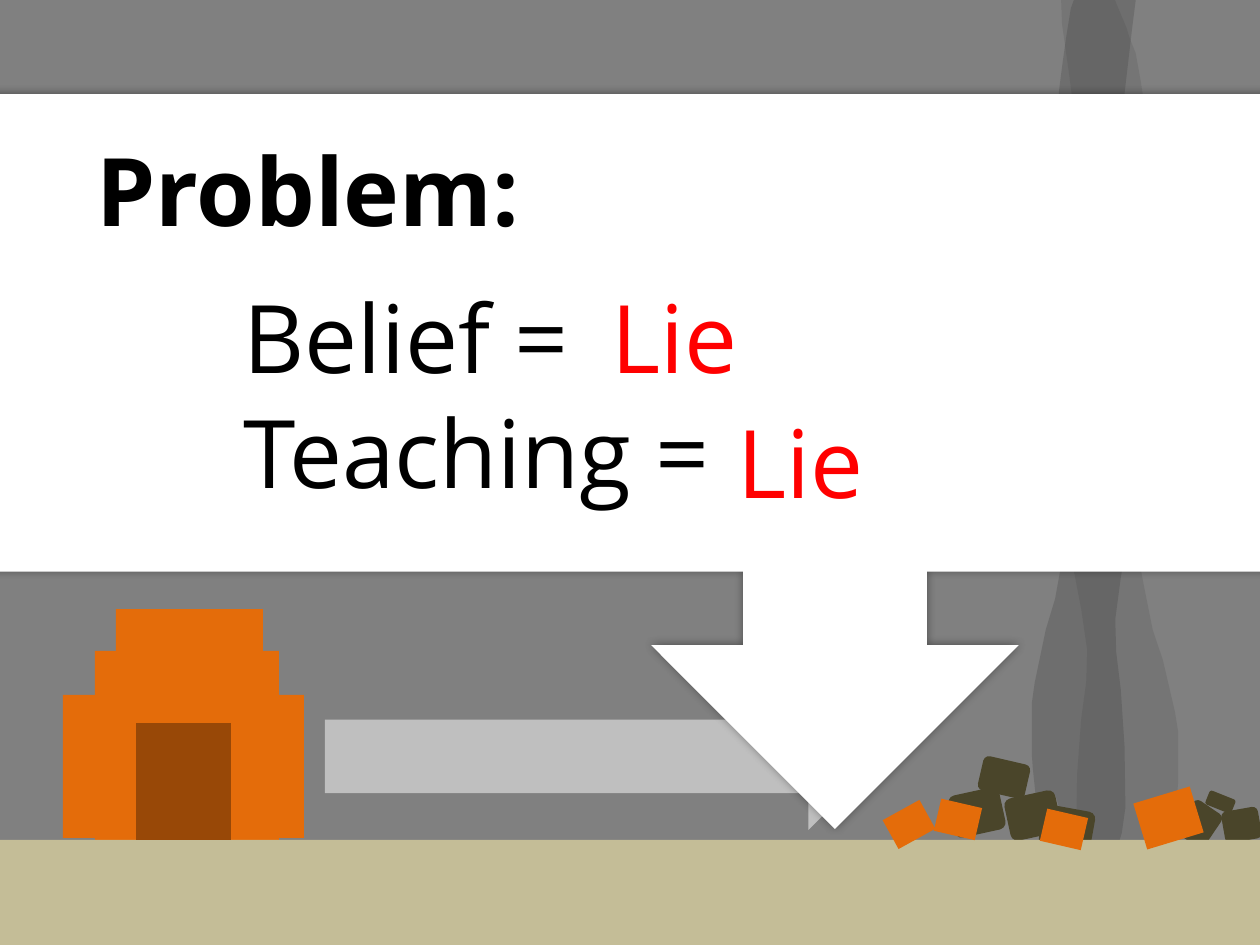
from lxml.etree import SubElement
from pptx import Presentation
from pptx.dml.color import RGBColor
from pptx.enum.shapes import MSO_SHAPE as Kind
from pptx.enum.text import MSO_ANCHOR as Anchor, MSO_AUTO_SIZE as AutoSize, PP_ALIGN as Align
from pptx.oxml.ns import qn
from pptx.util import Pt

THEME = {
    "sky": "808080", "brick": "E46C0A", "door": "984807", "rubble": "4A452A",
    "ground": "C4BD97", "arrow": "BFBFBF", "panel": "FFFFFF",
    "light smoke": "595959", "dark smoke": "404040", "shadow": "000000",
    "text": "000000", "lie": "FF0000", "font": "Open Sans", "size": 54,
}
PX = 914400 / 126
SLIDE = (1260, 945)

SKY = (-129, -144, 1507, 1105)
GROUND = (-92, 840, 1478, 141)
DOOR = (136, 723, 95, 117)
ARROW = (325, 683, 557, 147)
CALLOUT = (-63, 94, 1796, 735)
HOUSE = [(95, 651, 184, 193), (116, 609, 147, 107), (231, 695, 73, 143), (63, 695, 73, 143)]

RUBBLE = [
    (1041, 808, 52, 43, 10.3), (1007, 794, 52, 43, -12.3), (1182, 804, 34, 40, 34.2),
    (1213, 788, 15, 28, -68.2), (1223, 809, 37, 32, -10), (951, 791, 52, 43, -12.3),
    (980, 760, 48, 35, 12.9),
]
BRICKS = [
    (888, 808, 42, 33, -28.9), (937, 803, 42, 33, 13),
    (1043, 813, 42, 33, 13), (1139, 794, 59, 48, -16.9),
]

PLUME_SIZE = (121, 949)
PLUME = [
    (106, 921), (115, 897), (120, 854), (121, 842), (121, 789), (118, 770), (106, 718),
    (96, 688), (87, 643), (81, 610), (73, 578), (67, 549), (64, 518), (60, 484),
    (58, 466), (62, 432), (72, 363), (78, 311), (83, 275), (89, 237), (92, 219),
    (92, 193), (88, 165), (84, 139), (79, 111), (73, 96), (70, 86), (60, 62),
    (53, 43), (45, 20), (40, 4), (35, 0), (24, 8), (8, 21), (5, 55), (6, 82),
    (13, 132), (23, 210), (26, 248), (24, 290), (18, 333), (9, 373), (0, 422),
    (0, 471), (6, 525), (11, 585), (18, 630), (25, 667), (31, 708), (30, 740),
    (25, 777), (21, 832), (20, 892), (24, 917), (31, 937), (48, 945), (57, 949),
    (78, 945), (84, 936), (89, 900), (96, 879), (111, 897),
]
SMOKE = [
    ((1056, -58, 122, 949), False, "light smoke"),
    ((1032, -105, 112, 971), True, "dark smoke"),
]
SMOKE_ALPHA = 28

TITLE = ("Problem:", (84, 126, 473, 127))
LINES = [
    ("Belief =", (231, 273, 987, 127), "text"),
    ("Teaching =", (231, 388, 987, 127), "text"),
    ("Lie", (599, 273, 987, 127), "lie"),
    ("Lie", (725, 398, 987, 127), "lie"),
]


def emu(values):
    return [round(value * PX) for value in values]


def color(name):
    return RGBColor.from_string(THEME[name])


def paint(shape, name):
    shape.shadow.inherit = False
    shape.fill.solid()
    shape.fill.fore_color.rgb = color(name)
    shape.line.fill.background()


def add_block(shapes, kind, area, name, angle=0):
    shape = shapes.add_shape(kind, *emu(area))
    shape.rotation = angle
    paint(shape, name)
    return shape


def add_pieces(page, kind, pieces, name):
    for *area, angle in pieces:
        add_block(page.shapes, kind, area, name, angle)


def add_smoke(page, area, mirrored, name):
    left, top, width, height = area
    full_width, full_height = PLUME_SIZE
    points = [
        emu((left + (full_width - x if mirrored else x) * width / full_width,
             top + y * height / full_height))
        for x, y in PLUME
    ]
    builder = page.shapes.build_freeform(*points[0])
    builder.add_line_segments(points[1:], close=True)
    plume = builder.convert_to_shape()
    paint(plume, name)
    tint = plume.element.spPr.find(f"{qn('a:solidFill')}/{qn('a:srgbClr')}")
    SubElement(tint, qn("a:alpha"), val=str(SMOKE_ALPHA * 1000))


def add_glow(shape):
    effects = shape.element.spPr.find(qn("a:effectLst"))
    glow = SubElement(effects, qn("a:outerShdw"), blurRad=str(Pt(5)), dist="0", dir="0",
                      algn="ctr", rotWithShape="0")
    tint = SubElement(glow, qn("a:srgbClr"), val=THEME["shadow"])
    SubElement(tint, qn("a:alpha"), val="40000")


def write(box, text, area, name, bold=False):
    box.left, box.top, box.width, box.height = emu(area)
    frame = box.text_frame
    para = frame.paragraphs[0]
    span = para.add_run()
    formats = [
        (frame, {"word_wrap": True, "auto_size": AutoSize.SHAPE_TO_FIT_TEXT,
                 "vertical_anchor": Anchor.TOP}),
        (para, {"alignment": Align.LEFT}),
        (span, {"text": text}),
        (span.font, {"name": THEME["font"], "size": Pt(THEME["size"]), "bold": bold}),
        (span.font.color, {"rgb": color(name)}),
    ]
    for target, values in formats:
        for key, value in values.items():
            setattr(target, key, value)


def main():
    deck = Presentation()
    deck.slide_width, deck.slide_height = emu(SLIDE)
    page = deck.slides.add_slide(deck.slide_layouts[5])
    shapes = page.shapes

    add_block(shapes, Kind.RECTANGLE, SKY, "sky")
    house = shapes.add_group_shape()
    for area in HOUSE:
        add_block(house.shapes, Kind.RECTANGLE, area, "brick")
    for area, mirrored, name in SMOKE:
        add_smoke(page, area, mirrored, name)
    add_pieces(page, Kind.ROUNDED_RECTANGLE, RUBBLE, "rubble")
    add_block(shapes, Kind.RECTANGLE, GROUND, "ground")
    add_block(shapes, Kind.RECTANGLE, DOOR, "door")
    add_pieces(page, Kind.RECTANGLE, BRICKS, "brick")
    add_block(shapes, Kind.RIGHT_ARROW, ARROW, "arrow")
    add_glow(add_block(shapes, Kind.DOWN_ARROW_CALLOUT, CALLOUT, "panel"))

    title = shapes.title
    title.element.getparent().append(title.element)
    write(title, *TITLE, "text", bold=True)
    for text, area, name in LINES:
        write(shapes.add_textbox(*emu(area)), text, area, name)

    deck.save("out.pptx")


if __name__ == "__main__":
    main()
